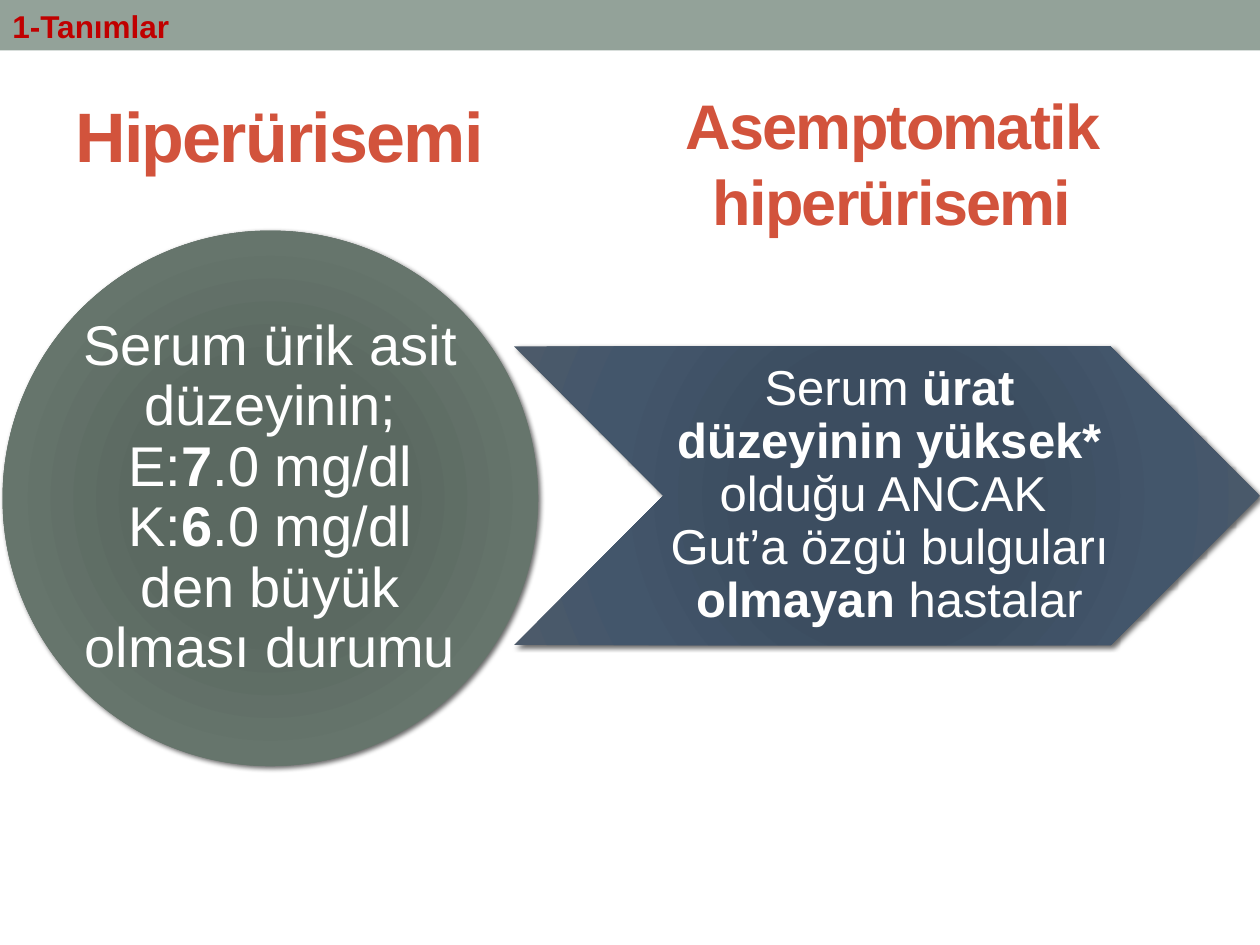
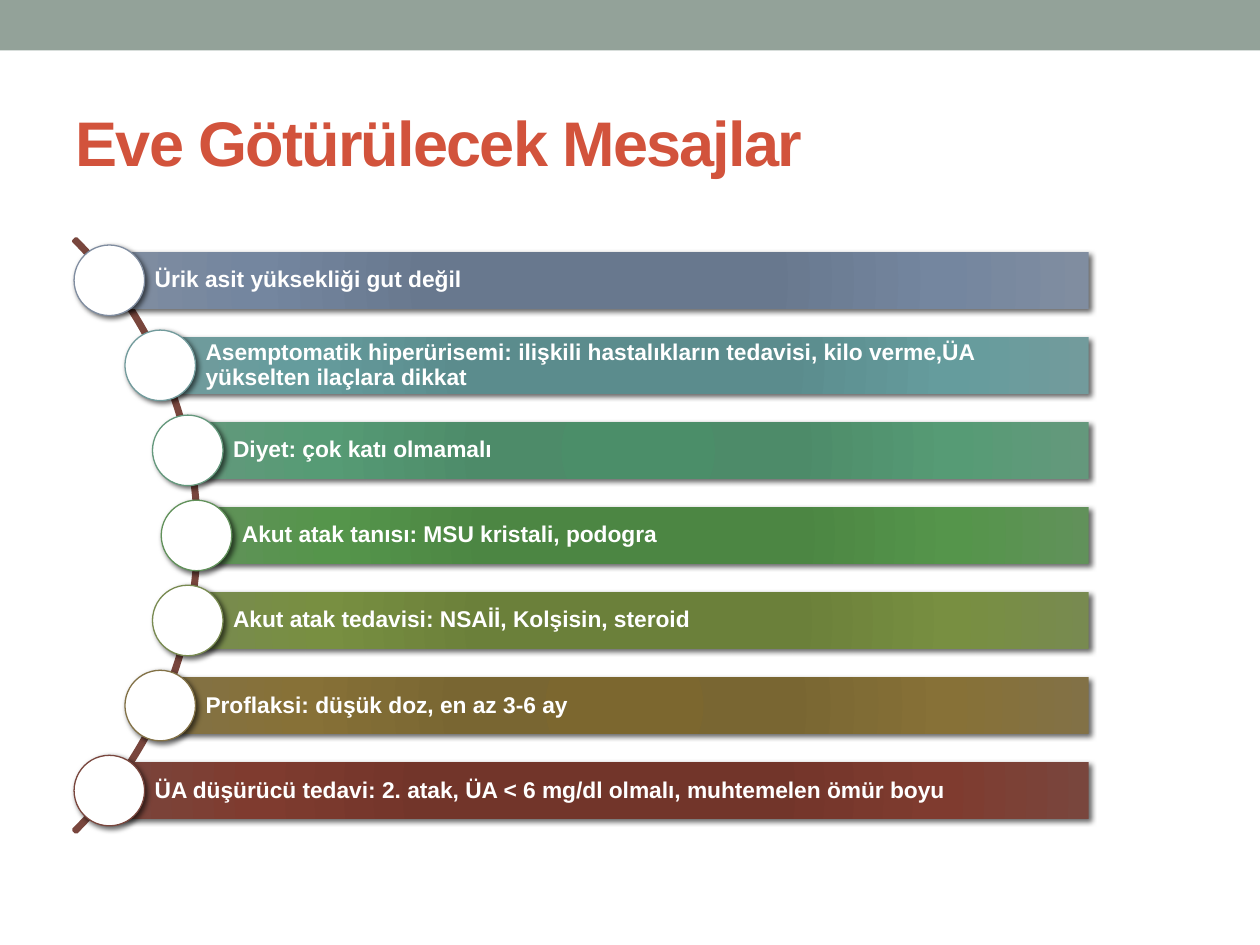
from math import sqrt

from lxml.etree import SubElement
from pptx import Presentation
from pptx.dml.color import RGBColor
from pptx.enum.shapes import MSO_SHAPE
from pptx.enum.text import MSO_ANCHOR, MSO_AUTO_SIZE, PP_ALIGN
from pptx.oxml.ns import qn
from pptx.util import Inches, Pt

FONT = "Arial"
WHITE = "FFFFFF"
BAND = "93A299"
TITLE = "D2533C"
SECTION = "C00000"
ARC = "79463D"
STOPS = (0, 34, 70, 100)
CIRCLE_COLORS = ("5B6960", "5B6961", "66756C", "6D7871")
CHEVRON_COLORS = ("3B4D61", "3C4D60", "43566B", "4C5A6A")

DEFINITION = [
    ("Serum ürik asit düzeyinin; E:", False), ("7", True),
    (".0 mg/dl K:", False), ("6", True),
    (".0 mg/dl den büyük olması durumu", False),
]
ASYMPTOMATIC = [
    ("Serum ", False), ("ürat düzeyinin yüksek* ", True),
    ("olduğu ANCAK \n", False), ("Gut’a özgü bulguları ", False),
    ("olmayan", True), (" hastalar", False),
]
MESSAGES = [
    ("Ürik asit yüksekliği gut değil",
     ("677790", "68788E", "74869F", "808DA0")),
    ("Asemptomatik hiperürisemi: ilişkili hastalıkların tedavisi, "
     "kilo verme,ÜA yükselten ilaçlara dikkat",
     ("598E8F", "5B8C8D", "659C9D", "729B9C")),
    ("Diyet: çok katı olmamalı",
     ("4B8E69", "4D8B69", "569B75", "64987C")),
    ("Akut atak tanısı: MSU kristali, podogra",
     ("4A8841", "4C8643", "55954B", "61915A")),
    ("Akut atak tedavisi: NSAİİ, Kolşisin, steroid",
     ("6C8238", "6B803A", "788F41", "788A50")),
    ("Proflaksi: düşük doz, en az 3-6 ay",
     ("7C672F", "796632", "877137", "827146")),
    ("ÜA düşürücü tedavi: 2. atak, ÜA < 6 mg/dl olmalı, "
     "muhtemelen ömür boyu",
     ("743327", "72352A", "7F3B2F", "79463D")),
]


def rgb(color):
    return RGBColor.from_string(color)


def inches(*values):
    return [Inches(v) for v in values]


def add_color(parent, color):
    return SubElement(parent, qn("a:srgbClr"), val=color)


def fill_gradient(sp, colors):
    sp.fill.gradient()
    grad = sp._element.spPr.find(qn("a:gradFill"))
    for child in list(grad):
        grad.remove(child)
    stops = SubElement(grad, qn("a:gsLst"))
    for pos, color in zip(STOPS, colors):
        add_color(SubElement(stops, qn("a:gs"), pos=str(pos * 1000)), color)
    circle = SubElement(grad, qn("a:path"), path="circle")
    SubElement(circle, qn("a:fillToRect"), **dict.fromkeys("ltrb", "100000"))


def add_shadow(sp):
    effects = sp._element.spPr.find(qn("a:effectLst"))
    shadow = SubElement(effects, qn("a:outerShdw"), blurRad=str(Pt(3)),
                        dist=str(Pt(2)), dir="2700000", rotWithShape="0")
    SubElement(add_color(shadow, "000000"), qn("a:alpha"), val="60000")


def add_shape(s, kind, at, fill=None, line=None, width=0.75, shadow=False):
    sp = s.shapes.add_shape(kind, *inches(*at))
    sp.shadow.inherit = False
    if line:
        sp.line.color.rgb = rgb(line)
        sp.line.width = Pt(width)
    else:
        sp.line.fill.background()
    if fill is None:
        sp.fill.background()
    elif isinstance(fill, tuple):
        fill_gradient(sp, fill)
    else:
        sp.fill.solid()
        sp.fill.fore_color.rgb = rgb(fill)
    if shadow:
        add_shadow(sp)
    return sp


def write(tf, runs, size, color, bold=False, align=PP_ALIGN.LEFT):
    tf.vertical_anchor = MSO_ANCHOR.MIDDLE
    p = tf.paragraphs[0]
    p.alignment = align
    p.font.name = FONT
    p.font.size = Pt(size)
    p.font.bold = bold
    p.font.color.rgb = rgb(color)
    for text, strong in runs:
        r = p.add_run()
        r.text = text.rstrip("\n")
        if strong:
            r.font.bold = True
        if text.endswith("\n"):
            p.add_line_break()
    return p


def write_in_shape(sp, runs, size, insets, bold=False,
                   align=PP_ALIGN.CENTER):
    tf = sp.text_frame
    tf.word_wrap = True
    (tf.margin_left, tf.margin_top,
     tf.margin_right, tf.margin_bottom) = inches(*insets)
    write(tf, runs, size, WHITE, bold, align).line_spacing = 0.9


def write_heading(sp, text, size, align=PP_ALIGN.LEFT):
    tf = sp.text_frame
    tf.word_wrap = True
    tf.auto_size = MSO_AUTO_SIZE.NONE
    p = write(tf, [(text, False)], size, TITLE, True, align)
    p._p.pPr.find(qn("a:defRPr")).set("spc", "-100")


def add_slide(prs, title, at, align=PP_ALIGN.LEFT):
    s = prs.slides.add_slide(prs.slide_layouts[5])
    add_shape(s, MSO_SHAPE.RECTANGLE, (0, 0, 10, 0.4), BAND)
    sp = s.shapes.title
    sp.left, sp.top, sp.width, sp.height = inches(*at)
    write_heading(sp, title, 36, align)
    return s


def add_definitions(prs):
    s = add_slide(prs, "Asemptomatik hiperürisemi",
                  (4.12, 0.42, 5.92, 1.74), PP_ALIGN.CENTER)
    circle = add_shape(s, MSO_SHAPE.OVAL, (0.02, 1.83, 4.25, 4.25),
                       CIRCLE_COLORS, shadow=True)
    write_in_shape(circle, DEFINITION, 32, (0, 0, 0, 0))
    heading = s.shapes.add_textbox(*inches(0.5, 0.13, 5.08, 1.87))
    write_heading(heading, "Hiperürisemi", 40)
    chevron = add_shape(s, MSO_SHAPE.CHEVRON, (4.08, 2.75, 5.92, 2.37),
                        CHEVRON_COLORS, shadow=True)
    write_in_shape(chevron, ASYMPTOMATIC, 28, (0.04, 0.02, 0, 0.02))
    section = s.shapes.add_textbox(*inches(0, 0.01, 1.53, 0.4))
    section.text_frame.word_wrap = False
    write(section.text_frame, [("1-Tanımlar", False)], 18, SECTION, True)


def add_messages(prs):
    s = add_slide(prs, "Eve Götürülecek Mesajlar", (0.5, 0.58, 9, 1.08))
    arc_x, arc_y, arc_d = -1.75, 4.25, 6.66
    arc = add_shape(s, MSO_SHAPE.BLOCK_ARC,
                    (arc_x - arc_d / 2, arc_y - arc_d / 2, arc_d, arc_d),
                    line=ARC, width=2.08)
    for i, value in enumerate((189, 27, 0.004)):
        arc.adjustments[i] = value

    pitch, bar_h, dot_d, bar_right, radius = 0.675, 0.45, 0.56, 8.64, 3.31
    for i, (text, colors) in enumerate(MESSAGES):
        dy = (i - len(MESSAGES) // 2) * pitch
        x, y = arc_x + sqrt(radius ** 2 - dy ** 2), arc_y + dy
        bar = add_shape(s, MSO_SHAPE.RECTANGLE,
                        (x, y - bar_h / 2, bar_right - x, bar_h),
                        colors, shadow=True)
        write_in_shape(bar, [(text, False)], 13, (0.36, 0.04, 0.04, 0.04),
                       True, PP_ALIGN.LEFT)
        add_shape(s, MSO_SHAPE.OVAL,
                  (x - dot_d / 2, y - dot_d / 2, dot_d, dot_d),
                  WHITE, colors[-1], shadow=True)


def main():
    prs = Presentation()
    prs.slide_width, prs.slide_height = inches(10, 7.5)
    add_definitions(prs)
    add_messages(prs)
    prs.save("out.pptx")


if __name__ == "__main__":
    main()
